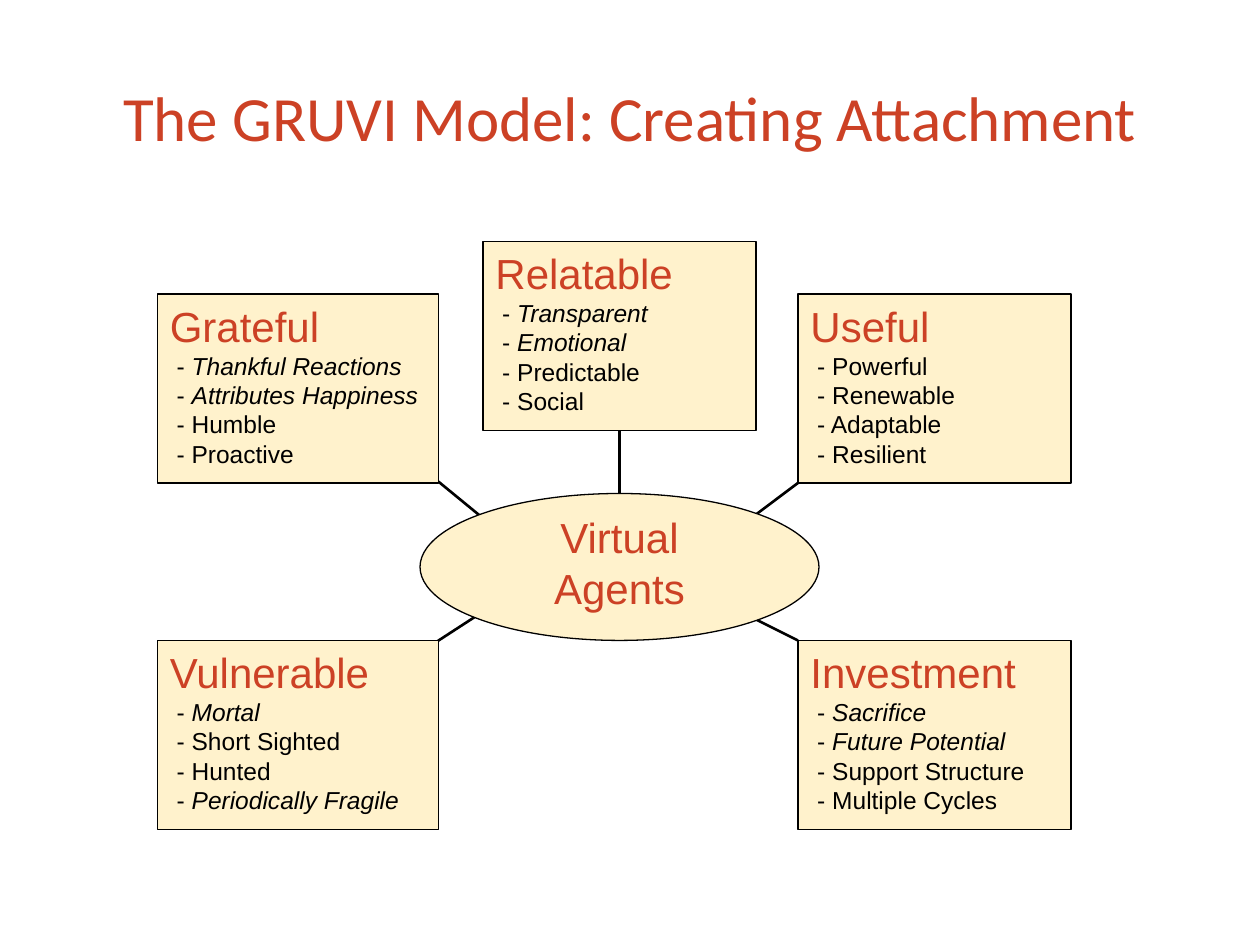
from pptx import Presentation
from pptx.dml.color import RGBColor
from pptx.enum.shapes import MSO_CONNECTOR, MSO_SHAPE
from pptx.enum.text import MSO_ANCHOR, PP_ALIGN
from pptx.oxml.ns import qn
from pptx.util import Inches, Pt
from lxml import etree

RECTANGLE, OVAL = MSO_SHAPE.RECTANGLE, MSO_SHAPE.OVAL
STRAIGHT = MSO_CONNECTOR.STRAIGHT
TOP, MIDDLE, BOTTOM = MSO_ANCHOR.TOP, MSO_ANCHOR.MIDDLE, MSO_ANCHOR.BOTTOM
LEFT, CENTER = PP_ALIGN.LEFT, PP_ALIGN.CENTER

RED = RGBColor(0xCC, 0x41, 0x25)
CREAM = RGBColor(0xFF, 0xF2, 0xCC)
BLACK = RGBColor(0, 0, 0)

# The slide is a grid of 120 columns and 90 rows, twelve to the inch
COLUMNS, ROWS, CELL = 120, 90, Inches(1) / 12

TITLE_BOX = (6, 3.6, 108, 15)
HUB_BOX = (40, 47, 38, 14)

# Trait cards: box, heading, items as (text, italic)
CARDS = [
    ((15, 61, 26.75, 18), "Vulnerable",
     [("Mortal", True), ("Short Sighted", False),
      ("Hunted", False), ("Periodically Fragile", True)]),
    ((76, 28, 26, 18), "Useful",
     [("Powerful", False), ("Renewable", False),
      ("Adaptable", False), ("Resilient", False)]),
    ((15, 28, 26.75, 18), "Grateful",
     [("Thankful Reactions", True), ("Attributes Happiness", True),
      ("Humble", False), ("Proactive", False)]),
    ((76, 61, 26, 18), "Investment",
     [("Sacrifice", True), ("Future Potential", True),
      ("Support Structure", False), ("Multiple Cycles", False)]),
    ((46, 23, 26, 18), "Relatable",
     [("Transparent", True), ("Emotional", True),
      ("Predictable", False), ("Social", False)]),
]

# Spokes from the cards to the hub: start column and row, end column and row
SPOKES = [
    (40.7, 45, 47.4, 50.5),
    (76, 46, 72, 49),
    (39, 62.8, 46.7, 57.8),
    (76, 61, 72, 59),
    (59, 41, 59, 47),
]


def to_lengths(cells):
    return [round(cell * CELL) for cell in cells]


def add_text(paragraph, text, size=14, font="Arial", color=BLACK, italic=False,
             align=LEFT, space_before=0):
    paragraph.alignment = align
    paragraph.space_before = Pt(space_before)
    run = paragraph.add_run()
    run.text = text
    run.font.size = Pt(size)
    run.font.name = font
    run.font.color.rgb = color
    run.font.italic = italic


def set_frame(shape, anchor):
    frame = shape.text_frame
    frame.word_wrap = True
    frame.vertical_anchor = anchor
    return frame


def add_panel(slide, kind, box, anchor):
    shape = slide.shapes.add_shape(kind, *to_lengths(box))
    shape.shadow.inherit = False
    shape.fill.solid()
    shape.fill.fore_color.rgb = CREAM
    shape.line.color.rgb = BLACK
    shape.line.width = Pt(0.75)
    return set_frame(shape, anchor)


def add_title(slide, box, text):
    frame = set_frame(slide.shapes.add_textbox(*to_lengths(box)), MIDDLE)
    add_text(frame.paragraphs[0], text, size=36, font="Calibri", color=RED,
             align=CENTER, space_before=9)


def add_hub(slide, box, text):
    frame = add_panel(slide, OVAL, box, BOTTOM)
    add_text(frame.paragraphs[0], text, size=24, color=RED, align=CENTER,
             space_before=9)


def add_card(slide, box, heading, items):
    frame = add_panel(slide, RECTANGLE, box, TOP)
    add_text(frame.paragraphs[0], heading, size=24, color=RED)
    for text, italic in items:
        paragraph = frame.add_paragraph()
        add_text(paragraph, " - ")
        add_text(paragraph, text, italic=italic)


def add_spoke(slide, ends):
    spoke = slide.shapes.add_connector(STRAIGHT, *to_lengths(ends))
    spoke.line.color.rgb = BLACK
    spoke.line.width = Pt(1.5)
    etree.SubElement(spoke._element.spPr, qn("a:effectLst"))


def main():
    presentation = Presentation()
    presentation.slide_width = round(COLUMNS * CELL)
    presentation.slide_height = round(ROWS * CELL)
    slide = presentation.slides.add_slide(presentation.slide_layouts[6])

    # Spokes lie behind the hub and the cards
    for ends in SPOKES:
        add_spoke(slide, ends)
    add_hub(slide, HUB_BOX, "Virtual Agents")
    for box, heading, items in CARDS:
        add_card(slide, box, heading, items)
    add_title(slide, TITLE_BOX, "The GRUVI Model: Creating Attachment")

    presentation.save("out.pptx")


if __name__ == "__main__":
    main()
